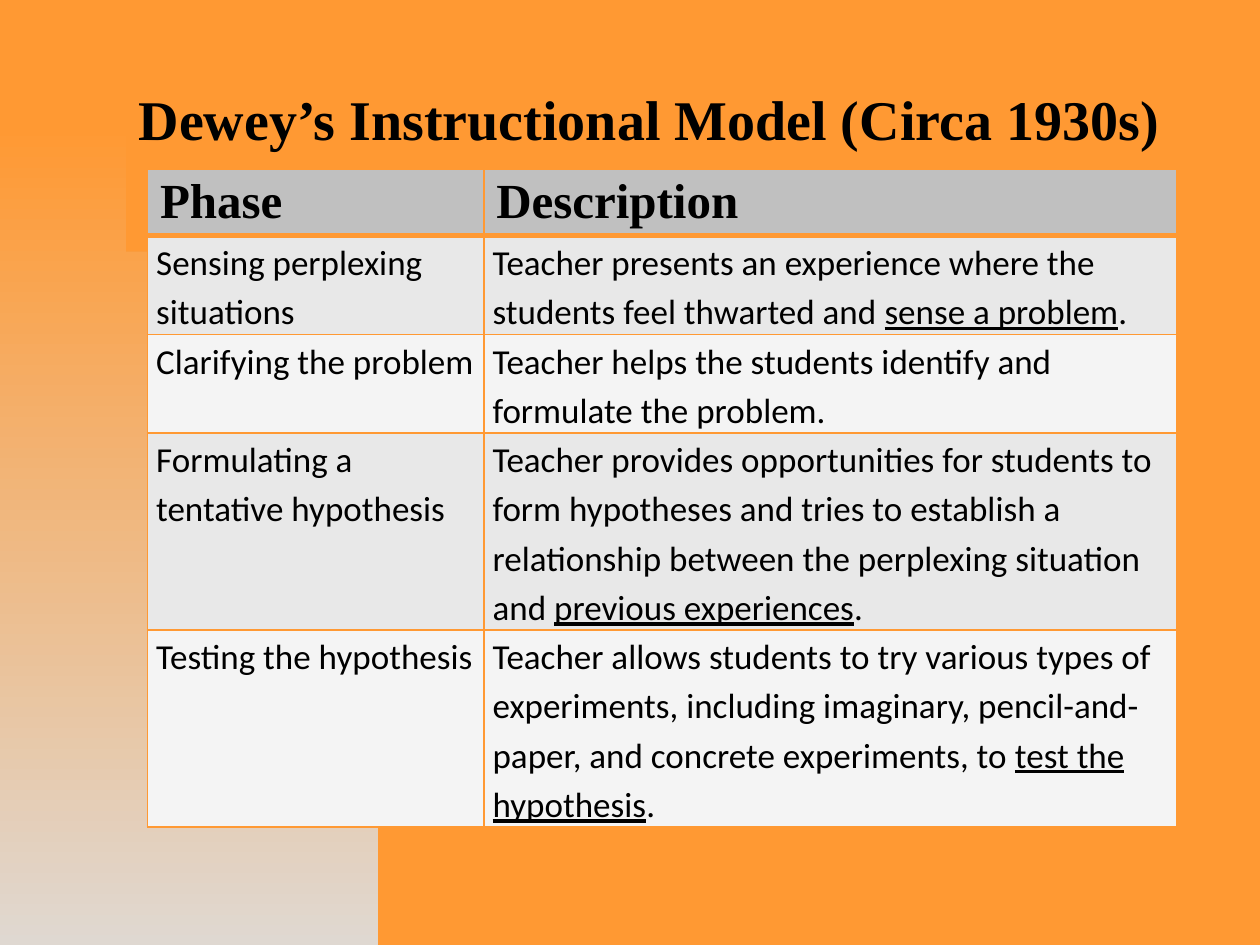
"""Build a slide with a table of Dewey's instructional model."""
from lxml.etree import SubElement
from pptx import Presentation
from pptx.dml.color import RGBColor
from pptx.enum.text import MSO_ANCHOR, MSO_AUTO_SIZE, PP_ALIGN
from pptx.oxml import parse_xml
from pptx.oxml.ns import nsdecls, qn
from pptx.util import Inches, Pt

ORANGE = RGBColor(0xFF, 0x99, 0x33)
PALE = RGBColor(0xDD, 0xDD, 0xDD)
BLACK = RGBColor(0, 0, 0)
HEADER = RGBColor(0xC0, 0xC0, 0xC0)
BANDS = RGBColor(0xE8, 0xE8, 0xE8), RGBColor(0xF4, 0xF4, 0xF4)
SERIF, SANS = "Times New Roman", "Calibri"

TITLE = "Dewey’s Instructional Model (Circa 1930s)"
HEADINGS = ("Phase", "Description")
PHASES = [
    ("Sensing perplexing situations",
     "Teacher presents an experience where the students feel thwarted and ",
     "sense a problem", "."),
    ("Clarifying the problem",
     "Teacher helps the students identify and formulate the problem."),
    ("Formulating a tentative hypothesis",
     "Teacher provides opportunities for students to form hypotheses and tries to "
     "establish a relationship between the perplexing situation and ",
     "previous experiences", "."),
    ("Testing the hypothesis",
     "Teacher allows students to try various types of experiments, including "
     "imaginary, pencil-and-paper, and concrete experiments, to ",
     "test the hypothesis", "."),
]
COL_WIDTHS = (2.67, 5.5)
ROW_HEIGHTS = (0.53, 0.78, 0.78, 1.56, 1.56)
ARC = ((0, 0.92), (1.75, 0.92), (3.17, 3.87), (3.17, 7.5))
ARC_STEPS = 60


def bezier(points, t):
    weights = ((1 - t) ** 3, 3 * t * (1 - t) ** 2, 3 * t * t * (1 - t), t ** 3)
    return tuple(sum(w * pt[i] for w, pt in zip(weights, points)) for i in (0, 1))


def add_arc(s):
    curve = [bezier(ARC, i / ARC_STEPS) for i in range(ARC_STEPS + 1)]
    builder = s.shapes.build_freeform(*curve[0], scale=Inches(1))
    builder.add_line_segments(curve[1:] + [(0, 7.5)], close=True)
    sp = builder.convert_to_shape()
    sp.shadow.inherit = False
    sp.line.fill.background()
    sp.fill.gradient()
    sp.fill.gradient_angle = 270
    for stop, color, position in zip(sp.fill.gradient_stops, (ORANGE, PALE), (0, 1)):
        stop.color.rgb, stop.position = color, position
    s.shapes._spTree.insert(2, sp._element)


def add_run(p, text, font, size, bold=False, underline=False):
    r = p.add_run()
    r.text = text
    r.font.name, r.font.size = font, Pt(size)
    r.font.bold, r.font.underline = bold, underline
    r.font.color.rgb = BLACK


def set_borders(cell, bottom):
    tcPr = cell._tc.get_or_add_tcPr()
    for i, (side, width) in enumerate(zip("LRTB", (1, 1, 1, bottom))):
        ln = parse_xml(f'<a:ln{side} {nsdecls("a")} w="{Pt(width)}"/>')
        fill = SubElement(ln, qn("a:solidFill"))
        SubElement(fill, qn("a:srgbClr"), val=str(ORANGE))
        tcPr.insert(i, ln)


def fill_cell(cell, texts, row):
    cell.fill.solid()
    cell.fill.fore_color.rgb = BANDS[(row - 1) % 2] if row else HEADER
    p = cell.text_frame.paragraphs[0]
    if row:
        cell.margin_left = cell.margin_right = Inches(0.07)
        cell.margin_top = cell.margin_bottom = 0
        p.line_spacing = 1.15
    for i, text in enumerate(texts):
        if row:
            add_run(p, text, SANS, 20, underline=i == 1)
        else:
            add_run(p, text, SERIF, 28, bold=True)
    set_borders(cell, 1 if row else 3)


def add_phase_table(s):
    rows = [HEADINGS] + PHASES
    table = s.shapes.add_table(
        len(rows), len(COL_WIDTHS), Inches(1.17), Inches(1.34),
        Inches(sum(COL_WIDTHS)), Inches(sum(ROW_HEIGHTS))).table
    for column, width in zip(table.columns, COL_WIDTHS):
        column.width = Inches(width)
    for i, (phase, *description) in enumerate(rows):
        table.rows[i].height = Inches(ROW_HEIGHTS[i])
        fill_cell(table.cell(i, 0), [phase], i)
        fill_cell(table.cell(i, 1), description, i)


def add_title(s):
    title = s.shapes.title
    title.left, title.top = Inches(1), Inches(0.67)
    title.width, title.height = Inches(8.67), Inches(0.67)
    tf = title.text_frame
    tf.word_wrap, tf.auto_size = True, MSO_AUTO_SIZE.NONE
    tf.vertical_anchor = MSO_ANCHOR.MIDDLE
    p = tf.paragraphs[0]
    p.alignment, p.line_spacing = PP_ALIGN.LEFT, 0.7
    add_run(p, TITLE, SERIF, 32, bold=True)


def main():
    prs = Presentation()
    prs.slide_width, prs.slide_height = Inches(10), Inches(7.5)
    s = prs.slides.add_slide(prs.slide_layouts[5])
    s.background.fill.solid()
    s.background.fill.fore_color.rgb = ORANGE
    add_arc(s)
    add_title(s)
    add_phase_table(s)
    prs.save("out.pptx")


if __name__ == "__main__":
    main()
